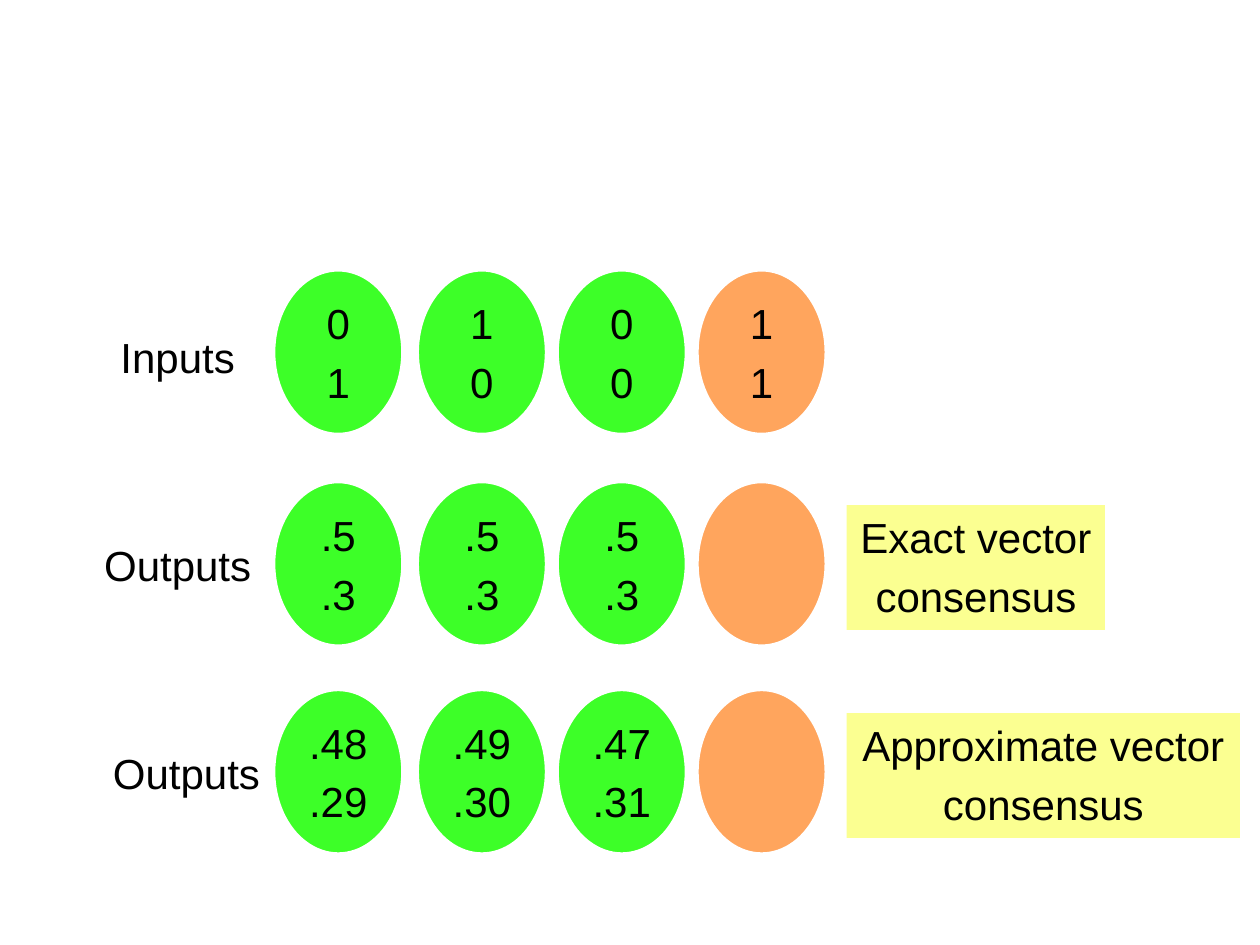
"""Build a slide comparing exact and approximate vector consensus."""
from dataclasses import dataclass

from lxml.etree import SubElement
from pptx import Presentation
from pptx.dml.color import RGBColor
from pptx.enum.shapes import MSO_SHAPE
from pptx.enum.text import MSO_ANCHOR, MSO_AUTO_SIZE, PP_ALIGN
from pptx.oxml.ns import qn
from pptx.util import Inches, Pt


@dataclass(frozen=True)
class Theme:
    font: str = "Arial"
    size: float = 24
    outline: float = 2.25
    ink: str = "000000"
    paper: str = "FFFFFF"
    correct: str = "3DFF28"
    faulty: str = "FFA55D"
    note: str = "FBFF91"


theme = Theme()


def write_lines(frame, lines):
    frame.word_wrap = False
    for index, line in enumerate(lines):
        paragraph = frame.paragraphs[0] if index == 0 else frame.add_paragraph()
        paragraph.alignment = PP_ALIGN.CENTER
        spacing = SubElement(paragraph._p.get_or_add_pPr(), qn("a:spcBef"))
        SubElement(spacing, qn("a:spcPct")).set("val", "20000")
        run = paragraph.add_run()
        run.text = line
        run.font.name = theme.font
        run.font.size = Pt(theme.size)
        run.font.color.rgb = RGBColor.from_string(theme.ink)


def add_filled(kind, left, top, width, height, color):
    shape = slide.shapes.add_shape(
        kind, Inches(left), Inches(top), Inches(width), Inches(height))
    shape.shadow.inherit = False
    shape.fill.solid()
    shape.fill.fore_color.rgb = RGBColor.from_string(color)
    shape.line.fill.background()
    return shape


presentation = Presentation()
presentation.slide_width, presentation.slide_height = Inches(10), Inches(7.5)
slide = presentation.slides.add_slide(presentation.slide_layouts[6])

columns = [2.17, 3.31, 4.42, 5.53]
node_width, node_height = 1.03, 1.31
label_top, label_pitch, label_height = 2.58, 1.65, 0.5
note_left, note_offset, note_height = 6.72, 0.19, 0.99

rounds = [
    (2.14, "Inputs", 0.85, 1.12, ["01", "10", "00", "11"], None, 0),
    (3.82, "Outputs", 0.72, 1.38, [(".5", ".3")] * 3 + [()],
     ["Exact vector", "consensus"], 2.05),
    (5.47, "Outputs", 0.79, 1.38,
     [(".48", ".29"), (".49", ".30"), (".47", ".31"), ()],
     ["Approximate vector", "consensus"], 3.12),
]

for row, (top, label, label_left, label_width, vectors, note, note_width) in enumerate(rounds):
    caption = slide.shapes.add_textbox(
        Inches(label_left), Inches(label_top + row * label_pitch),
        Inches(label_width), Inches(label_height))
    write_lines(caption.text_frame, [label])
    caption.text_frame.auto_size = MSO_AUTO_SIZE.SHAPE_TO_FIT_TEXT

    for column, (left, vector) in enumerate(zip(columns, vectors)):
        color = theme.faulty if column == len(columns) - 1 else theme.correct
        node = add_filled(MSO_SHAPE.OVAL, left, top, node_width, node_height, color)
        node.line.color.rgb = RGBColor.from_string(theme.paper)
        node.line.width = Pt(theme.outline)
        node.text_frame.vertical_anchor = MSO_ANCHOR.MIDDLE
        write_lines(node.text_frame, vector)

    if note:
        verdict = add_filled(MSO_SHAPE.RECTANGLE, note_left, top + note_offset,
                             note_width, note_height, theme.note)
        verdict.text_frame.vertical_anchor = MSO_ANCHOR.TOP
        write_lines(verdict.text_frame, note)
        verdict.text_frame.auto_size = MSO_AUTO_SIZE.SHAPE_TO_FIT_TEXT

presentation.save("out.pptx")
